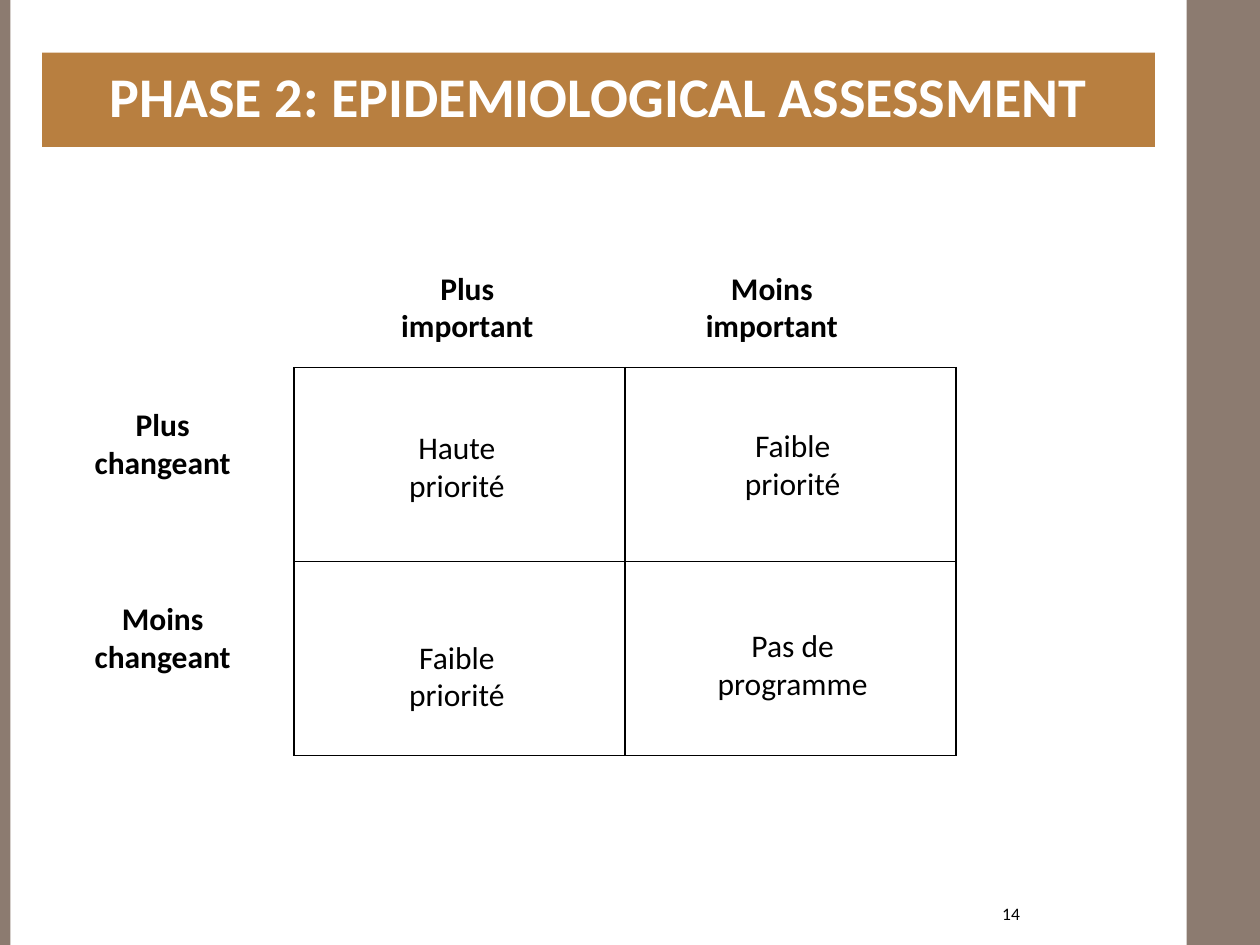
from lxml import etree
from pptx import Presentation
from pptx import util as u
from pptx.dml.color import RGBColor
from pptx.enum import shapes, text
from pptx.oxml.ns import qn

COLORS = {"taupe": "8C7B70", "ochre": "B87F40", "white": "FFFFFF", "black": "000000"}
Cm = u.Cm


def write(tf, content, size=18, bold=False, color="black",
          align=text.PP_ALIGN.CENTER, anchor=text.MSO_ANCHOR.TOP):
    tf.word_wrap = True
    tf.auto_size = text.MSO_AUTO_SIZE.NONE
    tf.vertical_anchor = anchor
    p = tf.paragraphs[0]
    p.alignment = align
    r = p.add_run()
    r.text = content
    r.font.name = "Calibri"
    r.font.size = u.Pt(size)
    r.font.bold = bold
    r.font.color.rgb = RGBColor.from_string(COLORS[color])


prs = Presentation()
prs.slide_width, prs.slide_height = Cm(25.4), Cm(19.05)
s = prs.slides.add_slide(prs.slide_layouts[5])

# Side bands
for left, width in [(23.92, 1.48), (0, 0.21)]:
    sp = s.shapes.add_shape(shapes.MSO_SHAPE.RECTANGLE,
                            Cm(left), 0, Cm(width), prs.slide_height)
    sp.shadow.inherit = False
    sp.fill.solid()
    sp.fill.fore_color.rgb = RGBColor.from_string(COLORS["taupe"])
    sp.line.fill.background()

# Title banner
title = s.shapes.title
title.left, title.top, title.width, title.height = Cm(0.85), Cm(1.06), Cm(22.43), Cm(1.9)
title.fill.solid()
title.fill.fore_color.rgb = RGBColor.from_string(COLORS["ochre"])
title.text_frame.margin_top = Cm(0.18)
write(title.text_frame, "PHASE 2: EPIDEMIOLOGICAL ASSESSMENT", size=32, bold=True, color="white")

# Priority matrix
table = s.shapes.add_table(2, 2, Cm(5.93), Cm(7.41), Cm(13.34), Cm(7.82)).table
table.first_row = table.horz_banding = False
for row in table.rows:
    for cell in row.cells:
        cell.fill.background()
        tc_pr = cell._tc.get_or_add_tcPr()
        for i, side in enumerate(("a:lnL", "a:lnR", "a:lnT", "a:lnB")):
            ln = etree.Element(qn(side), w=str(u.Pt(1)))
            fill = etree.SubElement(ln, qn("a:solidFill"))
            etree.SubElement(fill, qn("a:srgbClr"), val=COLORS["black"])
            tc_pr.insert(i, ln)

# Row and column headings, then the priority of each quadrant
labels = [
    ("Plus changeant", 1.27, 8.05, True),
    ("Moins changeant", 1.27, 11.96, True),
    ("Plus important", 7.41, 5.29, True),
    ("Moins important", 13.55, 5.29, True),
    ("Haute priorité", 7.2, 8.5, False),
    ("Faible priorité", 13.97, 8.46, False),
    ("Faible priorité", 7.2, 12.73, False),
    ("Pas de programme", 13.97, 12.49, False),
]
for label, left, top, bold in labels:
    sp = s.shapes.add_textbox(Cm(left), Cm(top), Cm(4.02), Cm(1.8))
    write(sp.text_frame, label, bold=bold)

# Slide number
sp = s.shapes.add_textbox(Cm(18.06), Cm(17.99), Cm(2.75), Cm(0.85))
write(sp.text_frame, "14", size=10, align=text.PP_ALIGN.RIGHT, anchor=text.MSO_ANCHOR.MIDDLE)

prs.save("out.pptx")
